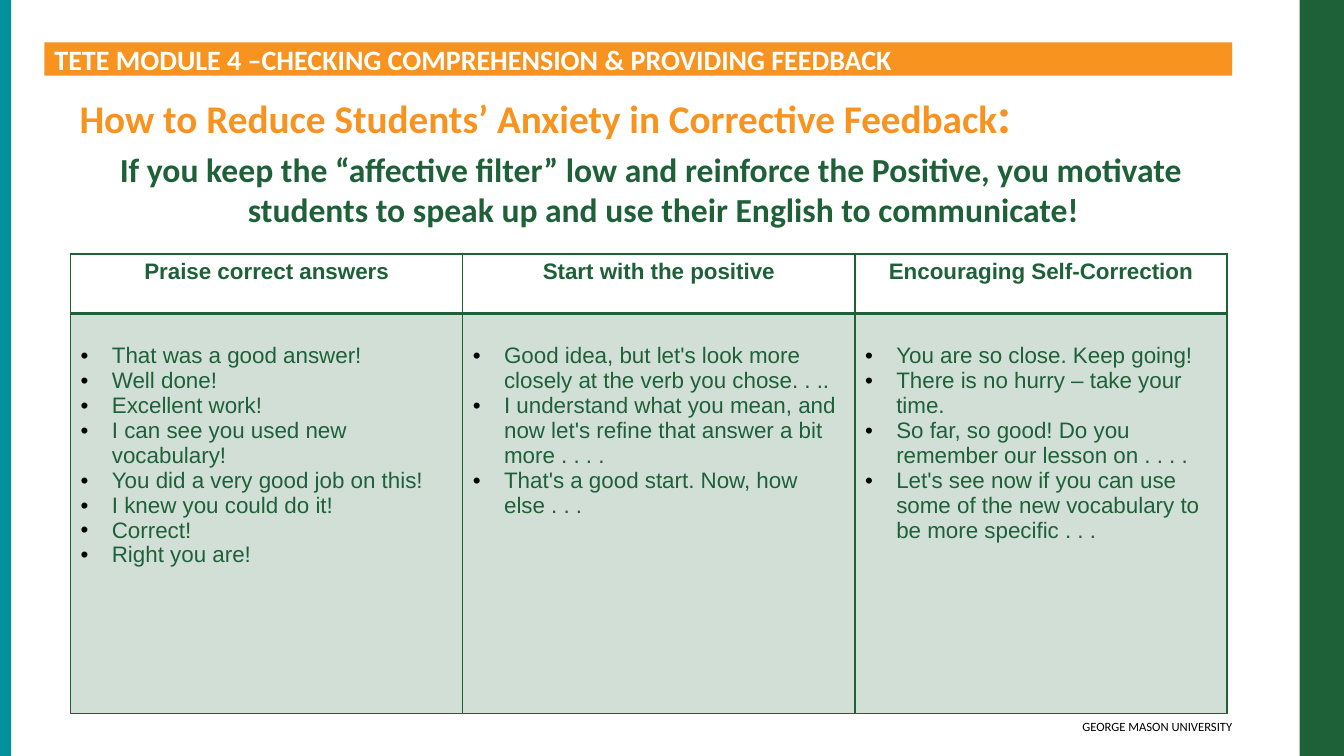
from lxml import etree
from pptx import Presentation
from pptx.dml.color import RGBColor
from pptx.enum.shapes import MSO_SHAPE
from pptx.enum.text import MSO_ANCHOR, MSO_AUTO_SIZE, PP_ALIGN
from pptx.oxml.ns import qn
from pptx.util import Inches, Pt

RECTANGLE = MSO_SHAPE.RECTANGLE
TOP, MIDDLE = MSO_ANCHOR.TOP, MSO_ANCHOR.MIDDLE
NO_AUTOFIT = MSO_AUTO_SIZE.NONE
LEFT, CENTER, RIGHT = PP_ALIGN.LEFT, PP_ALIGN.CENTER, PP_ALIGN.RIGHT

GREEN = RGBColor(0x1E, 0x61, 0x38)
TEAL = RGBColor(0x00, 0x90, 0x9E)
ORANGE = RGBColor(0xF7, 0x93, 0x1E)
HEADING_ORANGE = RGBColor(0xF8, 0x93, 0x1F)
WHITE = RGBColor(0xFF, 0xFF, 0xFF)
BLACK = RGBColor(0x00, 0x00, 0x00)


def format_run(run, size, color, bold=False, font="Calibri"):
    run.font.name = font
    run.font.size = Pt(size)
    run.font.bold = bold
    run.font.color.rgb = color


def set_indent(paragraph, margin, first_line):
    properties = paragraph._p.get_or_add_pPr()
    properties.set("marL", str(Inches(margin)))
    properties.set("indent", str(Inches(first_line)))
    return properties


presentation = Presentation()
presentation.slide_width = Inches(13.33)
presentation.slide_height = Inches(7.5)
slide = presentation.slides.add_slide(presentation.slide_layouts[5])

for left, width, color in [(12.89, 0.44, GREEN), (0, 0.11, TEAL)]:
    side_bar = slide.shapes.add_shape(
        RECTANGLE, Inches(left), 0, Inches(width), presentation.slide_height)
    side_bar.shadow.inherit = False
    side_bar.fill.solid()
    side_bar.fill.fore_color.rgb = color
    side_bar.line.fill.background()

title = slide.shapes.title
title.left, title.top = Inches(0.44), Inches(0.42)
title.width, title.height = Inches(11.78), Inches(0.33)
title.fill.solid()
title.fill.fore_color.rgb = ORANGE
title_frame = title.text_frame
title_frame.text = "TETE MODULE 4 –CHECKING COMPREHENSION & PROVIDING FEEDBACK"
title_frame.auto_size = NO_AUTOFIT
title_frame.vertical_anchor = MIDDLE
title_frame.margin_top = title_frame.margin_bottom = 0
title_frame.paragraphs[0].alignment = LEFT
format_run(title_frame.paragraphs[0].runs[0], 20, WHITE, bold=True)

heading = slide.shapes.add_textbox(
    Inches(0.44), Inches(0.78), Inches(11.78), Inches(1.6))
heading_frame = heading.text_frame
heading_frame.word_wrap = True
heading_frame.vertical_anchor = TOP
question = heading_frame.paragraphs[0]
question.text = "How to Reduce Students’ Anxiety in Corrective Feedback"
format_run(question.runs[0], 28, HEADING_ORANGE, bold=True)
colon = question.add_run()
colon.text = ":"
format_run(colon, 36, HEADING_ORANGE, bold=True)
advice = heading_frame.add_paragraph()
advice.text = ("If you keep the “affective filter” low and reinforce the Positive, "
               "you motivate students to speak up and use their English to communicate!")
advice.alignment = CENTER
advice.space_before = Pt(3.6)
format_run(advice.runs[0], 24, GREEN, bold=True)
for paragraph in heading_frame.paragraphs:
    set_indent(paragraph, 0.5, -0.25)

feedback_columns = [
    ("Praise correct answers", 3.89, [
        "That was a good answer!",
        "Well done!",
        "Excellent work!",
        "I can see you used new vocabulary!",
        "You did a very good job on this!",
        "I knew you could do it!",
        "Correct!",
        "Right you are!",
    ]),
    ("Start with the positive", 3.89, [
        "Good idea, but let's look more closely at the verb you chose. . ..",
        "I understand what you mean, and now let's refine that answer a bit more . . . .",
        "That's a good start. Now, how else . . .",
    ]),
    ("Encouraging Self-Correction", 3.69, [
        "You are so close. Keep going!",
        "There is no hurry – take your time.",
        "So far, so good! Do you remember our lesson on . . . .",
        "Let's see now if you can use some of the new vocabulary to be more specific . . .",
    ]),
]

table = slide.shapes.add_table(
    2, 3, Inches(0.7), Inches(2.52), Inches(11.47), Inches(4.56)).table
table.horz_banding = False
table.rows[0].height = Inches(0.59)
table.rows[1].height = Inches(3.97)

for index, (header, width, phrases) in enumerate(feedback_columns):
    table.columns[index].width = Inches(width)

    header_cell = table.cell(0, index)
    header_cell.fill.background()
    header_cell.text_frame.text = header
    header_paragraph = header_cell.text_frame.paragraphs[0]
    header_paragraph.alignment = CENTER
    format_run(header_paragraph.runs[0], 16, GREEN, bold=True, font="Arial")

    phrase_cell = table.cell(1, index)
    phrase_cell.margin_top = Inches(0.3)
    phrase_cell.fill.solid()
    phrase_cell.fill.fore_color.rgb = GREEN
    fill_color = phrase_cell._tc.tcPr.find(".//" + qn("a:srgbClr"))
    etree.SubElement(fill_color, qn("a:alpha"), val="20000")
    phrase_cell.text_frame.text = "\n".join(phrases)
    for paragraph in phrase_cell.text_frame.paragraphs:
        properties = set_indent(paragraph, 0.31, -0.31)
        bullet_color = etree.SubElement(properties, qn("a:buClr"))
        etree.SubElement(bullet_color, qn("a:srgbClr"), val=str(BLACK))
        etree.SubElement(properties, qn("a:buFont"), typeface="Arial")
        etree.SubElement(properties, qn("a:buChar"), char="•")
        format_run(paragraph.runs[0], 16, GREEN, font="Arial")

    for cell, bottom_width, top_width in [(header_cell, 2, 1), (phrase_cell, 1, 2)]:
        border_widths = [("a:lnL", 1), ("a:lnR", 1), ("a:lnT", top_width), ("a:lnB", bottom_width)]
        for position, (side, points) in enumerate(border_widths):
            border = etree.Element(qn(side), w=str(Pt(points)))
            border_fill = etree.SubElement(border, qn("a:solidFill"))
            etree.SubElement(border_fill, qn("a:srgbClr"), val=str(GREEN))
            cell._tc.tcPr.insert(position, border)

footer = slide.shapes.add_textbox(
    Inches(6.78), Inches(7.08), Inches(5.44), Inches(0.33))
footer_frame = footer.text_frame
footer_frame.word_wrap = True
footer_frame.margin_right = 0
footer_frame.text = "GEORGE MASON UNIVERSITY"
footer_frame.paragraphs[0].alignment = RIGHT
format_run(footer_frame.paragraphs[0].runs[0], 9, BLACK)

presentation.save("out.pptx")
